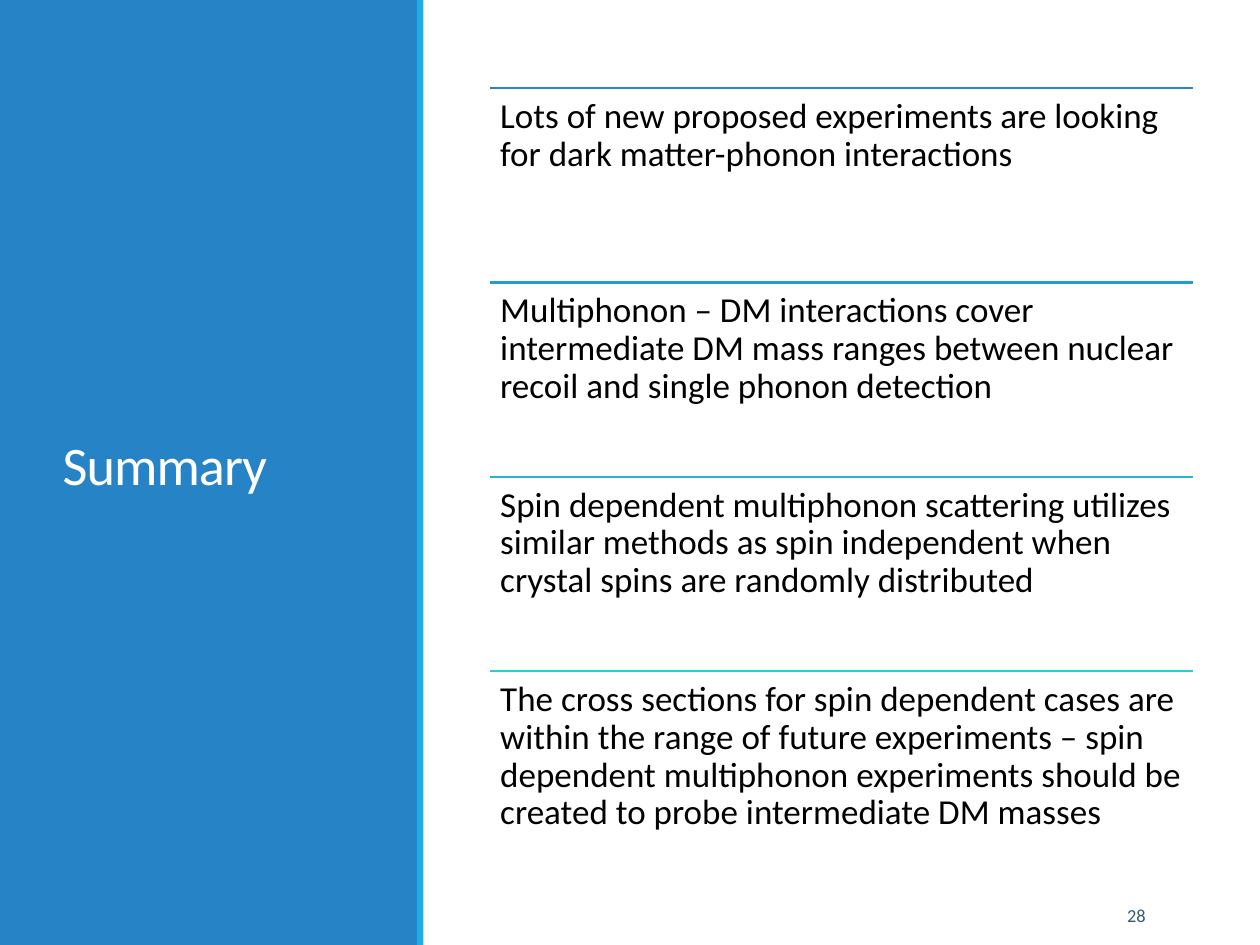
from lxml import etree
from pptx import Presentation
from pptx.dml.color import RGBColor
from pptx.enum.shapes import MSO_CONNECTOR, MSO_SHAPE
from pptx.enum.text import MSO_ANCHOR, PP_ALIGN
from pptx.oxml.ns import qn
from pptx.util import Inches, Pt

RECTANGLE = MSO_SHAPE.RECTANGLE
STRAIGHT = MSO_CONNECTOR.STRAIGHT
TOP, MIDDLE = MSO_ANCHOR.TOP, MSO_ANCHOR.MIDDLE
LEFT, RIGHT = PP_ALIGN.LEFT, PP_ALIGN.RIGHT

WIDTH, HEIGHT = 10, 7.5
PANEL_WIDTH = 3.32
POINTS = [
    ("2683C6", "Lots of new proposed experiments are looking for dark matter-phonon interactions"),
    ("269BCC", "Multiphonon – DM interactions cover intermediate DM mass ranges between "
               "nuclear recoil and single phonon detection"),
    ("27B4D1", "Spin dependent multiphonon scattering utilizes similar methods as spin "
               "independent when crystal spins are randomly distributed"),
    ("27CED7", "The cross sections for spin dependent cases are within the range of future "
               "experiments – spin dependent multiphonon experiments should be created to "
               "probe intermediate DM masses"),
]


def color(value):
    """Turn a hex string into a colour."""
    return RGBColor.from_string(value)


def add_bar(page, box, fill):
    """Draw a plain filled rectangle in the box."""
    bar = page.shapes.add_shape(RECTANGLE, *map(Inches, box))
    bar.shadow.inherit = False
    bar.fill.solid()
    bar.fill.fore_color.rgb = color(fill)
    bar.line.fill.background()


def add_text(page, box, text, size, fill, anchor=TOP, align=LEFT, spacing=1.0, inset=None):
    """Write one paragraph in the box and return its run."""
    frame = page.shapes.add_textbox(*map(Inches, box)).text_frame
    frame.word_wrap = True
    frame.vertical_anchor = anchor
    if inset is not None:
        frame.margin_left = frame.margin_right = Inches(inset)
        frame.margin_top = frame.margin_bottom = Inches(inset)
    frame.text = text
    para = frame.paragraphs[0]
    para.alignment = align
    para.line_spacing = spacing
    span = para.runs[0]
    span.font.name = "Calibri"
    span.font.size = Pt(size)
    span.font.color.rgb = color(fill)
    return span


def add_rule(page, left, top, width, stroke):
    """Draw a horizontal rule without a shadow."""
    rule = page.shapes.add_connector(
        STRAIGHT, Inches(left), Inches(top), Inches(left + width), Inches(top))
    rule.line.color.rgb = color(stroke)
    rule.line.width = Pt(1.25)
    etree.SubElement(rule._element.spPr, qn("a:effectLst"))


def add_title_panel(page, box, title):
    """Fill the side panel, its accent edge and its title."""
    left, top, width, height = box
    add_bar(page, box, "2683C6")
    add_bar(page, (left + width - 0.01, top, 0.05, height), "1CADE4")
    title_box = (left + 0.12 * width, top + 0.076 * height, 0.76 * width, 0.841 * height)
    span = add_text(page, title_box, title, 31, "FFFFFF", MIDDLE, spacing=0.85)
    span.font._element.set("spc", "-50")


def add_points(page, box, points):
    """Stack ruled statements in equal rows of the box."""
    left, top, width, height = box
    row = height / len(points)
    for index, (stroke, text) in enumerate(points):
        row_top = top + index * row
        add_rule(page, left, row_top, width, stroke)
        add_text(page, (left, row_top, width, row), text, 20, "000000", spacing=0.9, inset=0.08)


def main():
    """Build and save the summary slide."""
    deck = Presentation()
    deck.slide_width, deck.slide_height = Inches(WIDTH), Inches(HEIGHT)
    page = deck.slides.add_slide(deck.slide_layouts[6])
    page.background.fill.solid()
    page.background.fill.fore_color.rgb = color("FFFFFF")
    add_title_panel(page, (0, 0, PANEL_WIDTH, HEIGHT), "Summary")
    add_text(page, (8.3, 7.06, 0.89, 0.4), "28", 10.5, "335B74", MIDDLE, RIGHT)
    add_points(page, (3.89, 0.7, 5.58, 6.17), POINTS)
    deck.save("out.pptx")


if __name__ == "__main__":
    main()
